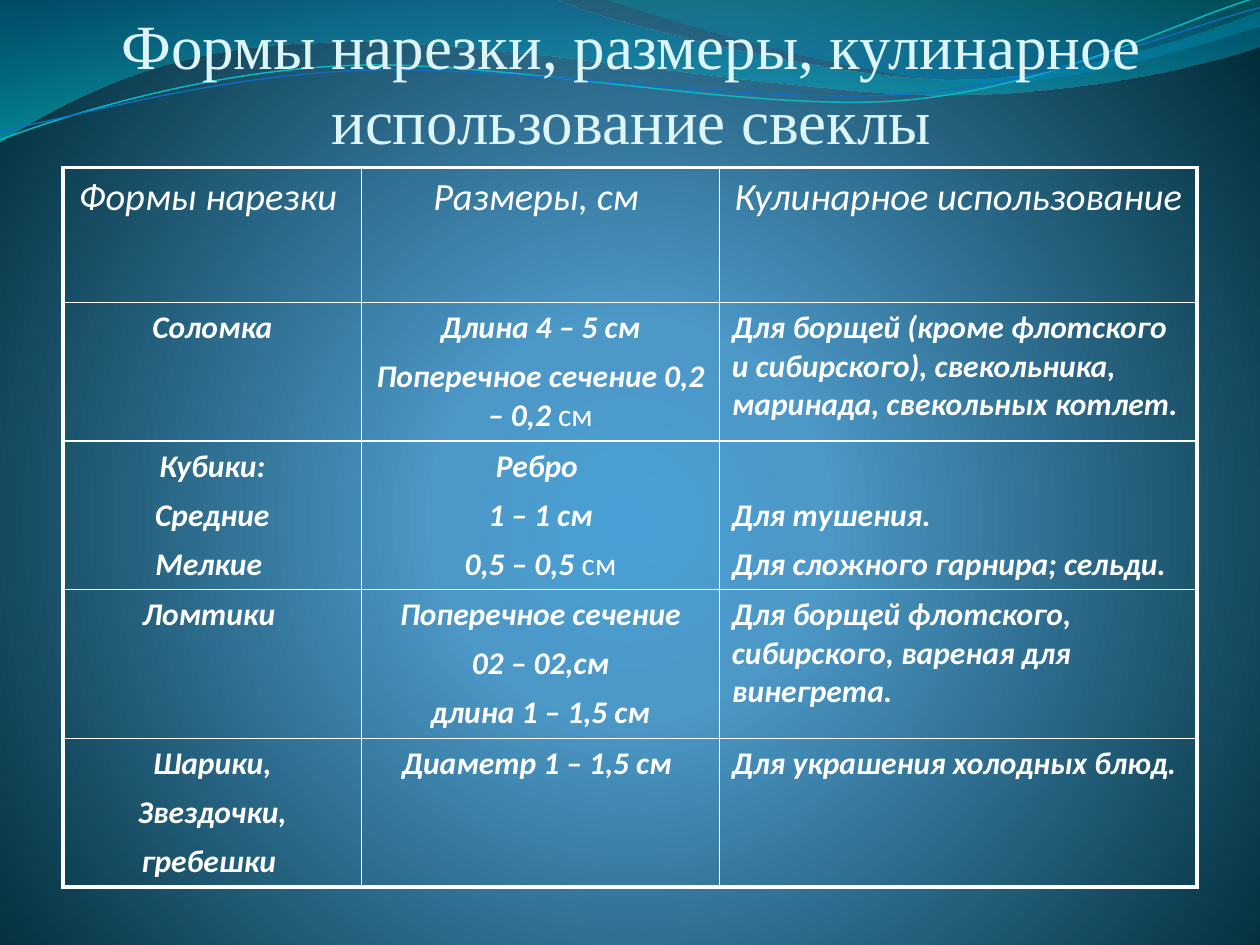
from lxml import etree
from pptx import Presentation
from pptx.dml.color import RGBColor
from pptx.enum.text import MSO_ANCHOR, PP_ALIGN
from pptx.oxml import parse_xml
from pptx.oxml.ns import nsdecls, qn
from pptx.util import Inches, Pt

COLORS = {"text": "FFFFFF", "title": "DBF5F9", "border": "FFFFFF",
          "center": "4AA0D6", "middle": "4C98C7", "edge": "002C38",
          "blue": "0074A1", "cyan": "00C6CF", "teal": "00A1A9", "azure": "008BBF",
          "line_cyan": "0AB8BF", "line_blue": "0F6FC6"}

TITLE = "Формы нарезки, размеры, кулинарное использование свеклы"
HEADER = ["Формы нарезки ", "Размеры, см ", "Кулинарное использование "]
# Each cell lists its paragraphs; a tuple is bold italic text plus a plain ending.
ROWS = [
    [["Соломка"],
     ["Длина 4 – 5 см", ("Поперечное сечение 0,2 – 0,2", " см")],
     ["Для борщей (кроме флотского и сибирского), свекольника, маринада, "
      "свекольных котлет."]],
    [["Кубики:", "Средние", "Мелкие "],
     ["Ребро ", "1 – 1 см", ("0,5 – 0,5", " см")],
     ["Для тушения.", "Для сложного гарнира; сельди."]],
    [["Ломтики "],
     ["Поперечное сечение", "02 – 02,см", "длина 1 – 1,5 см"],
     ["Для борщей флотского, сибирского, вареная для винегрета."]],
    [["Шарики,", "Звездочки,", "гребешки "],
     ["Диаметр 1 – 1,5 см "],
     ["Для украшения холодных блюд."]],
]
COL_WIDTHS = [2.37, 2.84, 3.79]
ROW_HEIGHTS = [1.07, 1.1, 1.18, 1.18, 1.18]
USE_COLUMN = 2
LOWERED_CELL, LOWERED_TOP = (2, USE_COLUMN), 0.44  # starts level with the second line

# Outlines: a start point, then points (2 numbers) or Bezier curves (6 numbers).
# Gradient stops: position, colour, opacity in percent.
WAVES = [
    ([(0, -0.01), (4.4, -0.01), (4.76, 0.17, 6.64, 0.63, 7.58, 0.63),
      (8.53, 0.63, 9.58, 0.26, 10, 0.09), (10.01, 0.36),
      (9.83, 0.44, 8.7, 0.76, 7.46, 0.75), (6.22, 0.75, 3.82, 0.28, 2.57, 0.34),
      (1.29, 0.35, 0.46, 0.83, -0.01, 1.13), (0, -0.01)],
     [(0, "blue", 45), (1, "cyan", 55)]),
    ([(4.79, -0.01), (5.09, 0.11, 6.82, 0.62, 7.69, 0.65),
      (8.56, 0.69, 9.61, 0.32, 10, 0.21), (10, 0), (4.79, -0.01)],
     [(0, "teal", 30), (0.8, "azure", 45)]),
]
LINES = [
    ([(0, 1.11), (0.48, 0.93, 1.58, 0.57, 2.77, 0.52),
      (3.95, 0.47, 5.93, 0.89, 7.13, 0.8), (8.33, 0.71, 9.38, 0.15, 9.98, -0.02)],
     "line_cyan", 0.85),
    ([(0, 1.04), (0.47, 0.96, 1.64, 0.61, 2.83, 0.56),
      (4.03, 0.51, 5.97, 0.83, 7.17, 0.75), (8.36, 0.67, 9.41, 0.21, 10, 0.06)],
     "line_blue", 0.75),
]


def rgb(name):
    return RGBColor.from_string(COLORS[name])


def set_background(s):
    stops = "".join(f'<a:gs pos="{pos}"><a:srgbClr val="{COLORS[name]}"/></a:gs>'
                    for pos, name in [(0, "center"), (25000, "middle"), (100000, "edge")])
    bg = parse_xml(
        f'<p:bg {nsdecls("p", "a")}><p:bgPr><a:gradFill rotWithShape="1">'
        f'<a:gsLst>{stops}</a:gsLst><a:path path="circle">'
        '<a:fillToRect l="10000" t="110000" r="10000" b="100000"/></a:path>'
        '</a:gradFill><a:effectLst/></p:bgPr></p:bg>')
    s.element.cSld.insert(0, bg)


def add_outline(s, outline, close):
    """Build a freeform through the end points, then bend its curved segments."""
    ends = [(Inches(part[-2]), Inches(part[-1])) for part in outline]
    builder = s.shapes.build_freeform(*ends[0])
    builder.add_line_segments(ends[1:], close=close)
    sp = builder.convert_to_shape()
    sp.shadow.inherit = False
    segments = list(sp.element.spPr.iter(qn("a:lnTo")))
    for segment, part in zip(segments, outline[1:]):
        if len(part) == 2:
            continue
        curve = etree.Element(qn("a:cubicBezTo"))
        for x, y in zip(part[::2], part[1::2]):
            etree.SubElement(curve, qn("a:pt"), x=str(Inches(x) - sp.left),
                             y=str(Inches(y) - sp.top))
        segment.getparent().replace(segment, curve)
    return sp


def add_wave(s, outline, stops):
    sp = add_outline(s, outline, True)
    sp.line.fill.background()
    sp.fill.gradient()
    sp.fill.gradient_angle = 270
    for stop, (pos, name, _) in zip(sp.fill.gradient_stops, stops):
        stop.position = pos
        stop.color.rgb = rgb(name)
    for clr, (_, _, opacity) in zip(sp.element.spPr.iter(qn("a:srgbClr")), stops):
        etree.SubElement(clr, qn("a:alpha"), val=str(opacity * 1000))


def add_wave_line(s, outline, color, width):
    sp = add_outline(s, outline, False)
    sp.fill.background()
    sp.line.color.rgb = rgb(color)
    sp.line.width = Pt(width)


def style(font, size, color, name):
    font.size, font.name = Pt(size), name
    font.color.rgb = rgb(color)


def add_title(s):
    tf = s.shapes.add_textbox(Inches(0.47), 0, Inches(9.08), Inches(1.25)).text_frame
    tf.word_wrap = True
    tf.vertical_anchor = MSO_ANCHOR.BOTTOM
    tf.margin_left = tf.margin_right = tf.margin_bottom = 0
    p = tf.paragraphs[0]
    p.text = TITLE
    p.alignment = PP_ALIGN.CENTER
    style(p.font, 36, "title", "Times New Roman")


def set_borders(cell, outer):
    """Draw all four sides, thicker on the sides named in outer."""
    tc_pr = cell._tc.get_or_add_tcPr()
    for side in "LRTB":
        width = Pt(2.25 if side in outer else 1)
        tc_pr.append(parse_xml(
            f'<a:ln{side} {nsdecls("a")} w="{width}"><a:solidFill>'
            f'<a:srgbClr val="{COLORS["border"]}"/></a:solidFill></a:ln{side}>'))


def fill_cell(cell, paragraphs, header, centered):
    tf = cell.text_frame
    for i, content in enumerate(paragraphs):
        p = tf.add_paragraph() if i else tf.paragraphs[0]
        if i:
            p.space_before = Pt(6)
        p.alignment = PP_ALIGN.CENTER if centered else PP_ALIGN.LEFT
        style(p.font, 22 if header else 18, "text", "Calibri")
        parts = content if isinstance(content, tuple) else (content,)
        for j, text in enumerate(parts):
            r = p.add_run()
            r.text = text
            r.font.italic = j == 0
            r.font.bold = j == 0 and not header


def add_cutting_table(s):
    rows = [[[text] for text in HEADER]] + ROWS
    n_rows, n_cols = len(rows), len(COL_WIDTHS)
    table = s.shapes.add_table(n_rows, n_cols, Inches(0.5), Inches(1.33),
                               Inches(sum(COL_WIDTHS)),
                               Inches(sum(ROW_HEIGHTS))).table
    table.first_row = table.horz_banding = False
    for column, width in zip(table.columns, COL_WIDTHS):
        column.width = Inches(width)
    for row, height in zip(table.rows, ROW_HEIGHTS):
        row.height = Inches(height)
    for i, row in enumerate(rows):
        for j, paragraphs in enumerate(row):
            cell = table.cell(i, j)
            edges = {"L": j == 0, "R": j == n_cols - 1, "T": i == 0, "B": i == n_rows - 1}
            set_borders(cell, [side for side, on in edges.items() if on])
            cell.fill.background()
            fill_cell(cell, paragraphs, i == 0, i == 0 or j != USE_COLUMN)
    table.cell(*LOWERED_CELL).margin_top = Inches(LOWERED_TOP)


def main():
    prs = Presentation()
    prs.slide_width, prs.slide_height = Inches(10), Inches(7.5)
    s = prs.slides.add_slide(prs.slide_layouts[6])
    set_background(s)
    for wave in WAVES:
        add_wave(s, *wave)
    for line in LINES:
        add_wave_line(s, *line)
    add_title(s)
    add_cutting_table(s)
    prs.save("out.pptx")


if __name__ == "__main__":
    main()
